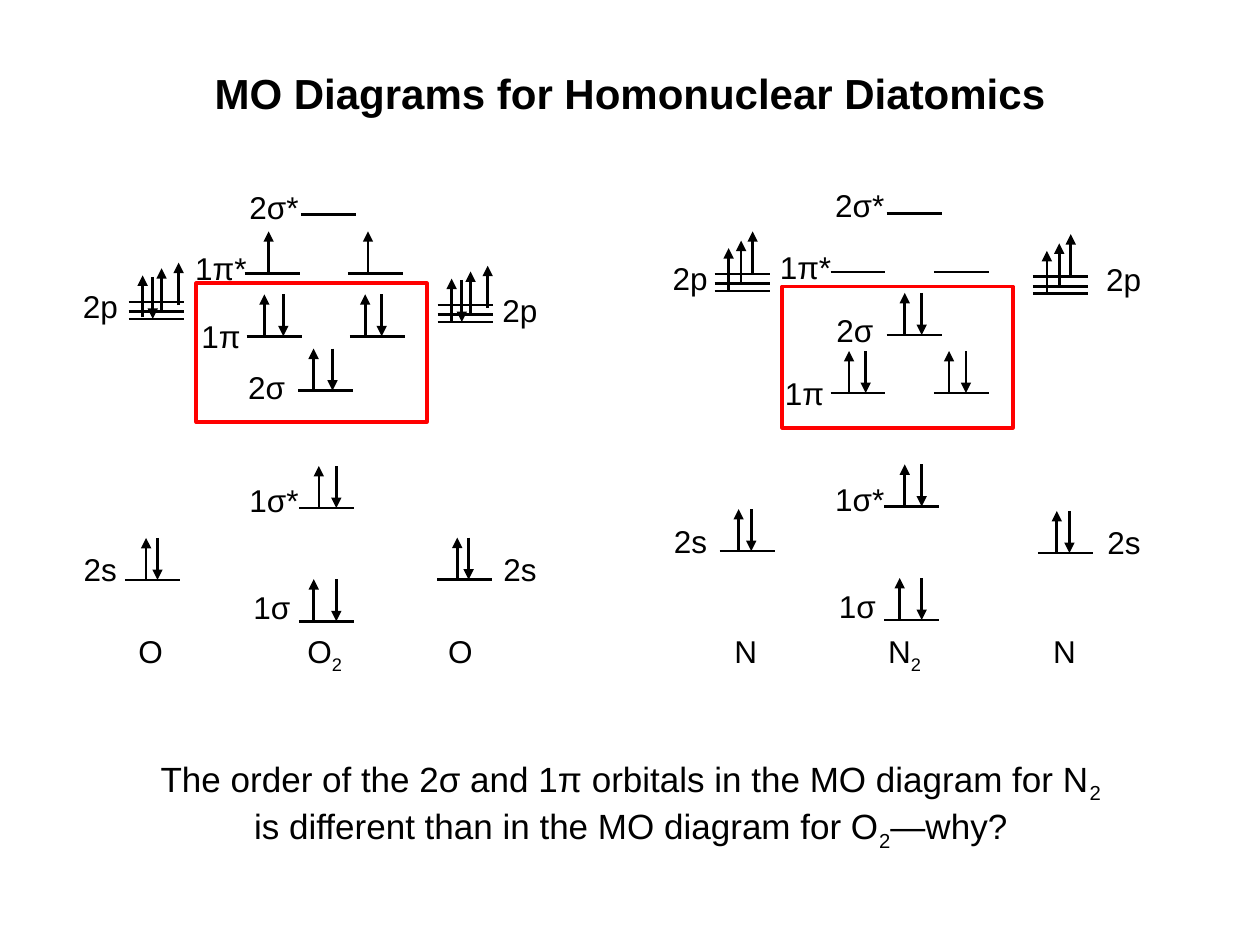
from collections import namedtuple
from dataclasses import dataclass

from lxml import etree
from pptx import Presentation
from pptx import util as u
from pptx.dml import color as c
from pptx.enum import shapes, text
from pptx.oxml import ns


@dataclass(frozen=True)
class Theme:
    font: str = "Arial"
    ink: c.RGBColor = c.RGBColor(0, 0, 0)
    accent: c.RGBColor = c.RGBColor(255, 0, 0)
    title: int = 24
    caption: int = 20
    label: int = 18
    line: float = 1.5
    frame: float = 2


THEME = Theme()
LEVEL_WIDTH = 31.4
ARROW_LENGTH = 24
LABEL_HEIGHT = 28.8
P_ROWS = (0, 4.2, 9.6)  # rise of the three p levels above the lowest

# up and down are distances of the electrons from the level's left end
Level = namedtuple("Level", "x y up down", defaults=(None, None))
# electrons of a p set: distance from the left end, rise, spin up
O_2P = ((8, 0.8, True), (13.8, 0, False), (18.8, 4.9, True), (28.6, 8.1, True))
N_2P = ((8, 0.4, True), (15.1, 4.7, True), (21.7, 10, True))

OXYGEN = dict(
    levels=[
        Level(172, 122.4),                                  # 2σ*
        Level(139.8, 156.2, 13.7), Level(198.8, 156.2, 11.5),  # 1π*
        Level(141, 192.2, 10.1, 20.9), Level(200, 192.2, 8.7, 18.1),  # 1π
        Level(170.5, 223.2, 8.7, 19.5),                     # 2σ
        Level(170.8, 290.3, 11.4, 21.4),                    # 1σ*
        Level(170.8, 355, 8.5, 21.4),                       # 1σ
        Level(71.4, 331.4, 12.1, 18.6), Level(249.8, 331.2, 11.5, 18),  # 2s
    ],
    p_sets=[(73.5, 182.2), (250.1, 184)],
    p_electrons=O_2P,
    # text, left, top, width
    labels=[
        ("2σ*", 135.5, 103.7, 43.2), ("1π*", 104.4, 139, 43.9),
        ("1π", 108, 177.8, 37.4), ("2σ", 134.8, 206.6, 36),
        ("1σ*", 135.5, 271.4, 43.2), ("1σ", 137.7, 332.6, 36),
        ("2p", 40.3, 160.6, 34.6), ("2p", 280, 162.7, 34.6),
        ("2s", 40.8, 311, 33.8), ("2s", 280.6, 311, 33.8),
        ("O", 72, 357.8, 28.8), ("O_2", 168.5, 357.8, 35.3),
        ("O", 249, 357.8, 28.8),
    ],
)
NITROGEN = dict(
    levels=[
        Level(506.7, 122),                                  # 2σ*
        Level(474.6, 155.5), Level(533.6, 155.5),           # 1π*
        Level(506.7, 191.4, 10.3, 20),                      # 2σ
        Level(474.6, 224.6, 10.6, 20.1), Level(533.6, 224.6, 8.7, 18.4),  # 1π
        Level(505.3, 289.4, 11.7, 21.4),                    # 1σ*
        Level(505.3, 354.3, 8.8, 21.4),                     # 1σ
        Level(411.3, 314.9, 10.8, 18), Level(593.1, 316, 10.8, 18),  # 2s
    ],
    p_sets=[(408.4, 166.2), (590.2, 167.8)],
    p_electrons=N_2P,
    labels=[
        ("2σ*", 470.2, 103, 43.2), ("1π*", 438.5, 138.2, 43.9),
        ("2σ", 470.9, 174.2, 36), ("1π", 441.4, 210.2, 37.4),
        ("1σ*", 470.2, 270.7, 43.2), ("1σ", 472.3, 331.9, 36),
        ("2p", 377.3, 144.7, 34.6), ("2p", 625, 145.2, 34.6),
        ("2s", 378, 294.5, 33.8), ("2s", 625.7, 295.2, 33.8),
        ("N", 412.6, 357.8, 27.4), ("N_2", 500.4, 357.8, 34.6),
        ("N", 594.7, 357.8, 27.4),
    ],
)


def add_line(parent, start, end, arrow=False):
    connector = parent.add_connector(
        shapes.MSO_CONNECTOR.STRAIGHT, *map(u.Pt, (*start, *end)))
    connector.line.color.rgb = THEME.ink
    connector.line.width = u.Pt(THEME.line)
    properties = connector._element.spPr
    if arrow:
        outline = properties.find(ns.qn("a:ln"))
        etree.SubElement(outline, ns.qn("a:tailEnd"), type="triangle")
    etree.SubElement(properties, ns.qn("a:effectLst"))


def add_level(parent, x, y):
    add_line(parent, (x, y), (x + LEVEL_WIDTH, y))


def add_electron(parent, x, base, spin_up):
    bottom, top = (x, base), (x, base - ARROW_LENGTH)
    start, end = (bottom, top) if spin_up else (top, bottom)
    add_line(parent, start, end, arrow=True)


def add_text(parent, content, box, size, bold=False, centered=False, wrap=False):
    """Write one paragraph; the character after each _ is a subscript."""
    shape = parent.add_textbox(*map(u.Pt, box))
    frame = shape.text_frame
    frame.word_wrap = wrap
    frame.auto_size = text.MSO_AUTO_SIZE.SHAPE_TO_FIT_TEXT
    paragraph = frame.paragraphs[0]
    if centered:
        paragraph.alignment = text.PP_ALIGN.CENTER
    font = paragraph.font
    font.name, font.size, font.bold = THEME.font, u.Pt(size), bold
    font.color.rgb = THEME.ink

    first, *others = content.split("_")
    paragraph.add_run().text = first
    for part in others:
        subscript = paragraph.add_run()
        subscript.text = part[0]
        subscript.font._element.set("baseline", "-25000")
        if part[1:]:
            paragraph.add_run().text = part[1:]


def add_diagram(slide, levels, p_sets, p_electrons, labels):
    group = slide.shapes.add_group_shape().shapes
    # Molecular and s levels with their electrons
    for level in levels:
        add_level(group, level.x, level.y)
        for offset, spin_up in ((level.up, True), (level.down, False)):
            if offset is not None:
                add_electron(group, level.x + offset, level.y, spin_up)
    # Atomic p levels
    for x, y in p_sets:
        for rise in P_ROWS:
            add_level(group, x, y - rise)
        for offset, rise, spin_up in p_electrons:
            add_electron(group, x + offset, y - rise, spin_up)
    # Names of orbitals and species
    for content, x, y, width in labels:
        add_text(group, content, (x, y, width, LABEL_HEIGHT), THEME.label)


def add_frame(slide, box):
    shape = slide.shapes.add_shape(
        shapes.MSO_SHAPE.RECTANGLE, *map(u.Pt, box))
    shape.shadow.inherit = False
    shape.fill.background()
    shape.line.color.rgb = THEME.accent
    shape.line.width = u.Pt(THEME.frame)


def main():
    presentation = Presentation()
    presentation.slide_width, presentation.slide_height = u.Pt(720), u.Pt(540)
    slide = presentation.slides.add_slide(presentation.slide_layouts[6])

    # Diagrams
    for diagram in (OXYGEN, NITROGEN):
        add_diagram(slide, **diagram)

    # Question
    add_text(slide.shapes,
             "The order of the 2σ and 1π orbitals in the MO diagram for N_2"
             " is different than in the MO diagram for O_2—why?",
             (81.4, 429.1, 558, 55.4), THEME.caption, centered=True, wrap=True)

    # Frames around the orbitals that swap
    add_frame(slide, (447, 163.7, 131.8, 80.8))
    add_frame(slide, (112.1, 161.8, 131.8, 79.4))

    # Title
    add_text(slide.shapes, "MO Diagrams for Homonuclear Diatomics",
             (113, 35.3, 494, 36), THEME.title, bold=True, centered=True)

    presentation.save("out.pptx")


if __name__ == "__main__":
    main()
